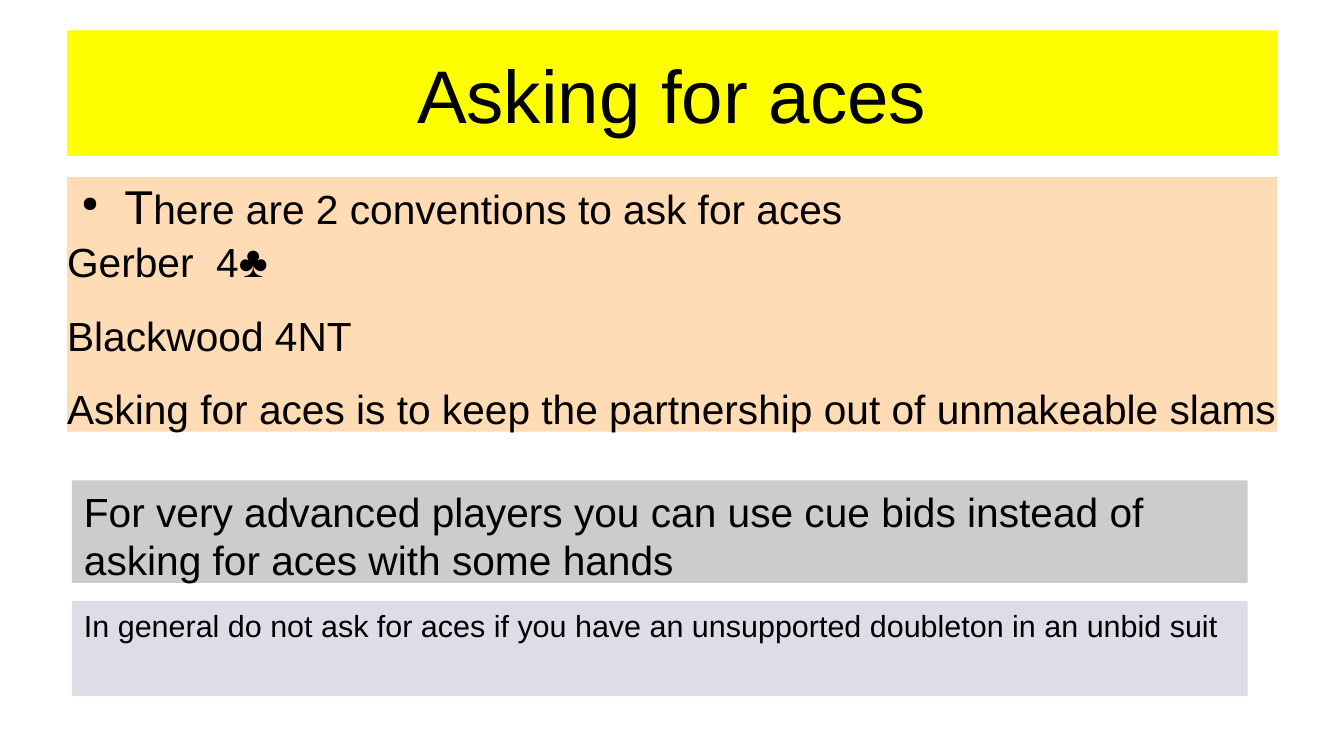
import pptx
import pptx.util
import pptx.dml.color
import pptx.enum.shapes
import pptx.enum.text
import lxml.etree

Inches = pptx.util.Inches
Pt = pptx.util.Pt
ALIGN = pptx.enum.text.PP_ALIGN
ANCHOR = pptx.enum.text.MSO_ANCHOR


def color(hex_code):
    """Turn a hex string into a colour."""
    return pptx.dml.color.RGBColor.from_string(hex_code)


def add_panel(slide, box, fill, inset=(0, 0), anchor=ANCHOR.TOP):
    """Add a filled panel in the box and return its text frame."""
    panel = slide.shapes.add_shape(
        pptx.enum.shapes.MSO_SHAPE.RECTANGLE, *[Inches(length) for length in box])
    panel.shadow.inherit = False
    panel.fill.solid()
    panel.fill.fore_color.rgb = color(fill)
    panel.line.fill.background()
    frame = panel.text_frame
    frame.word_wrap = True
    frame.vertical_anchor = anchor
    frame.margin_left = frame.margin_right = Inches(inset[0])
    frame.margin_top = frame.margin_bottom = Inches(inset[1])
    return frame


def write(paragraph, runs, align=ALIGN.LEFT, before=0):
    """Fill a paragraph with runs of text, size and weight."""
    paragraph.alignment = align
    paragraph.space_before = Pt(before)
    for text, size, bold in runs:
        run = paragraph.add_run()
        run.text = text
        run.font.name = "Arial"
        run.font.size = Pt(size)
        run.font.bold = bold
        run.font.color.rgb = color("000000")


def add_bullet(paragraph):
    """Give a paragraph a small round bullet with a hanging indent."""
    properties = paragraph._p.get_or_add_pPr()
    properties.set("marL", str(Inches(0.47)))
    properties.set("indent", str(Inches(-0.35)))
    namespace = "{http://schemas.openxmlformats.org/drawingml/2006/main}"
    bullet_color = lxml.etree.SubElement(properties, namespace + "buClr")
    lxml.etree.SubElement(bullet_color, namespace + "srgbClr", val="000000")
    lxml.etree.SubElement(properties, namespace + "buSzPct", val="45000")
    lxml.etree.SubElement(properties, namespace + "buChar", char="●")


def add_title(slide, box):
    """Add the yellow title band."""
    frame = add_panel(slide, box, "FFFF00", anchor=ANCHOR.MIDDLE)
    write(frame.paragraphs[0], [("Asking for aces", 44, False)], ALIGN.CENTER)


def add_conventions(slide, box):
    """Add the panel that lists the ace-asking conventions."""
    frame = add_panel(slide, box, "FFDBB6")
    intro = frame.paragraphs[0]
    write(intro, [("T", 28, False),
                  ("here are 2 conventions to ask for aces", 24, False)], before=14.2)
    add_bullet(intro)
    write(frame.add_paragraph(), [("Gerber  4", 24, False), ("♣", 26, True)])
    for line in ("Blackwood 4NT",
                 "Asking for aces is to keep the partnership out of unmakeable slams"):
        write(frame.add_paragraph(), [(line, 24, False)], before=14.2)


def add_advice(slide, box, fill, text, size):
    """Add a panel with one piece of advice."""
    frame = add_panel(slide, box, fill, inset=(0.1, 0.05))
    write(frame.paragraphs[0], [(text, size, False)])


def main():
    """Build the slide and save it."""
    deck = pptx.Presentation()
    deck.slide_width = Inches(11.02)
    deck.slide_height = Inches(6.2)
    slide = deck.slides.add_slide(deck.slide_layouts[6])
    add_title(slide, (0.55, 0.25, 9.92, 1.03))
    add_conventions(slide, (0.55, 1.45, 9.92, 2.09))
    add_advice(slide, (0.59, 3.94, 9.64, 0.84), "CCCCCC",
               "For very advanced players you can use cue bids instead of "
               "asking for aces with some hands", 24)
    add_advice(slide, (0.59, 4.93, 9.64, 0.78), "DEDCE6",
               "In general do not ask for aces if you have an unsupported "
               "doubleton in an unbid suit", 18)
    deck.save("out.pptx")


if __name__ == "__main__":
    main()
